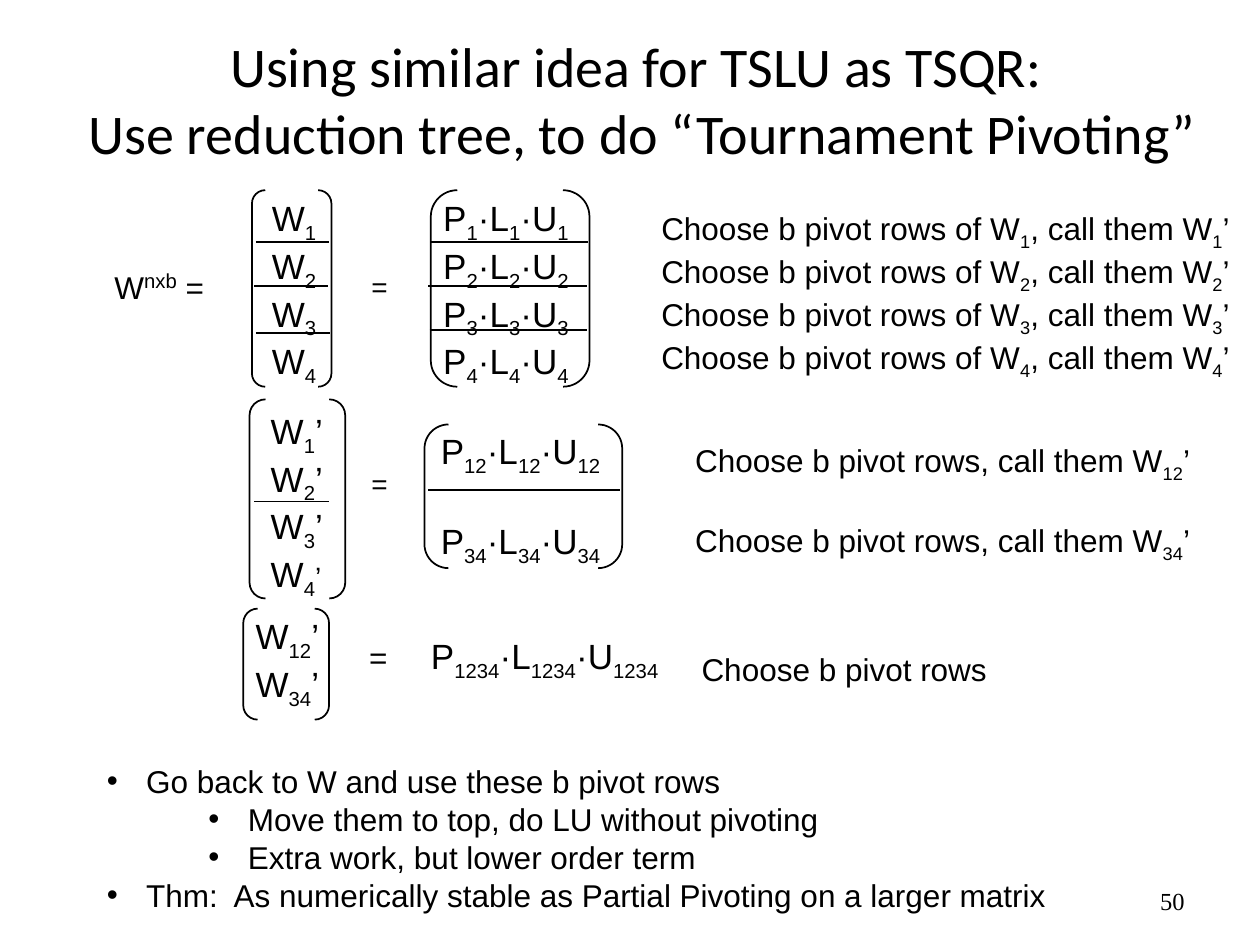
"""Build the slide on tournament pivoting for TSLU."""
from lxml import etree
from pptx import Presentation
from pptx.dml.color import RGBColor as Rgb
from pptx.enum.shapes import MSO_CONNECTOR as Link, MSO_SHAPE as Shape
from pptx.enum.text import MSO_ANCHOR as Anchor, PP_ALIGN as Align
from pptx.oxml.ns import qn
from pptx.util import Pt

INK = {"text": "000000", "line": "000000"}


def write(home, box, lines, size=20, font="Arial", wrap=False, gap=0,
          shift=-25000, small=None):
    """Add a text box; pieces between underscores are raised, lowered or a break."""
    frame = home.shapes.add_textbox(*map(Pt, box)).text_frame
    frame.word_wrap = wrap
    for row, line in enumerate(lines):
        para = frame.paragraphs[0] if row == 0 else frame.add_paragraph()
        para.alignment = Align.LEFT
        para.space_before = Pt(gap if row else 0)
        for part, words in enumerate(line.split("_")):
            if words == "\n":
                para.add_line_break()
            elif words:
                run = para.add_run()
                run.text = words
                run.font.name = font
                run.font.size = Pt(small if small and part % 2 else size)
                run.font.color.rgb = Rgb.from_string(INK["text"])
                if part % 2:
                    run._r.get_or_add_rPr().set("baseline", str(shift))
    return frame


def enclose(home, box, rules=()):
    """Add a bracket pair and the horizontal rules inside it."""
    pair = home.shapes.add_shape(Shape.DOUBLE_BRACKET, *map(Pt, box))
    pair.shadow.inherit = False
    pair.adjustments[0] = 0.167
    pair.fill.background()
    marks = [pair]
    for left, right, top in rules:
        rule = home.shapes.add_connector(
            Link.STRAIGHT, Pt(left), Pt(top), Pt(right), Pt(top))
        etree.SubElement(rule._element.spPr, qn("a:effectLst"))
        marks.append(rule)
    for mark in marks:
        mark.line.color.rgb = Rgb.from_string(INK["line"])
        mark.line.width = Pt(1)


deck = Presentation()
deck.slide_width, deck.slide_height = Pt(720), Pt(540)
slide = deck.slides.add_slide(deck.slide_layouts[6])

title = write(slide, (23.8, 24.5, 679.7, 63.4),
              ["Using similar idea for TSLU as TSQR:_\n_"
               " Use reduction tree, to do “Tournament Pivoting”"],
              32, "Calibri", True)
title.vertical_anchor = Anchor.MIDDLE
title.paragraphs[0].alignment = Align.CENTER

page = write(slide, (516.2, 500.4, 167.8, 28.8), ["50"], 14,
             "Times New Roman", True)
page.vertical_anchor = Anchor.MIDDLE
page.paragraphs[0].alignment = Align.RIGHT

first, second, third = [slide.shapes.add_group_shape() for _ in range(3)]
nums = range(1, 5)

write(first, (58.3, 147.6, 69.1, 28.8), ["W_nxb_ ="], 18, shift=30000, small=20)
write(first, (148.3, 108.7, 41, 104.4), [f"W_{n}_" for n in nums])
enclose(first, (144, 108.7, 45.4, 112.3),
        [(146.2, 187.9, 138.2), (145.4, 187.2, 163.4), (146.2, 188.6, 190.1)])
write(first, (246.2, 108.7, 100.8, 104.4),
      [f"P_{n}_·L_{n}_·U_{n}_" for n in nums])
enclose(first, (246.2, 108.7, 90.7, 112.3),
        [(246.2, 336.2, 138.2), (244.8, 335.5, 163.4), (245.5, 335.5, 188.6)])
write(first, (205.2, 150.5, 23.8, 26.6), ["="], 16)
write(first, (370.8, 115.9, 343.4, 94.3),
      [f"Choose b pivot rows of W_{n}_, call them W_{n}_’" for n in nums], 18)

prime = write(second, (147.6, 230.4, 44.6, 104.4), [f"W_{n}_’" for n in nums])
prime.paragraphs[-1].runs[-1].font.size = Pt(16)
enclose(second, (142.6, 228.2, 54.7, 113.8), [(145.4, 187.9, 286.6)])
write(second, (244.8, 241.9, 110.9, 79.9),
      [f"P_{n}_·L_{n}_·U_{n}_" for n in (12, 34)], gap=24)
enclose(second, (242.6, 242.6, 113, 82.1), [(244.8, 354.2, 280.1)])
write(second, (205.2, 262.8, 23.8, 26.6), ["="], 16)
write(second, (390.2, 248.4, 301, 72.7),
      [f"Choose b pivot rows, call them W_{n}_’" for n in (12, 34)], 18, gap=21)

write(third, (139, 347.8, 52.6, 55.4), [f"W_{n}_’" for n in (12, 34)])
enclose(third, (139, 347.8, 49, 63.4))
write(third, (203.8, 361, 25.2, 28.8), ["="], 18)
write(third, (239.2, 359.3, 157.5, 31.5), ["P_1234_·L_1234_·U_1234_"])
write(third, (393.8, 367.9, 179.3, 28.8), ["Choose b pivot rows"], 18)

notes = write(slide, (54, 432, 588.2, 108),
              ["Go back to W and use these b pivot rows",
               "Move them to top, do LU without pivoting",
               "Extra work, but lower order term",
               "Thm:  As numerically stable as Partial Pivoting on a larger matrix"],
              18, wrap=True)
for para, level in zip(notes.paragraphs, (0, 1, 1, 0)):
    para.level = level
    props = para._p.get_or_add_pPr()
    props.set("marL", str(Pt(80.6 if level else 22.5)))
    props.set("indent", str(Pt(-22.5)))
    etree.SubElement(props, qn("a:buFont")).set("typeface", "Arial")
    etree.SubElement(props, qn("a:buChar")).set("char", "•")

deck.save("out.pptx")
